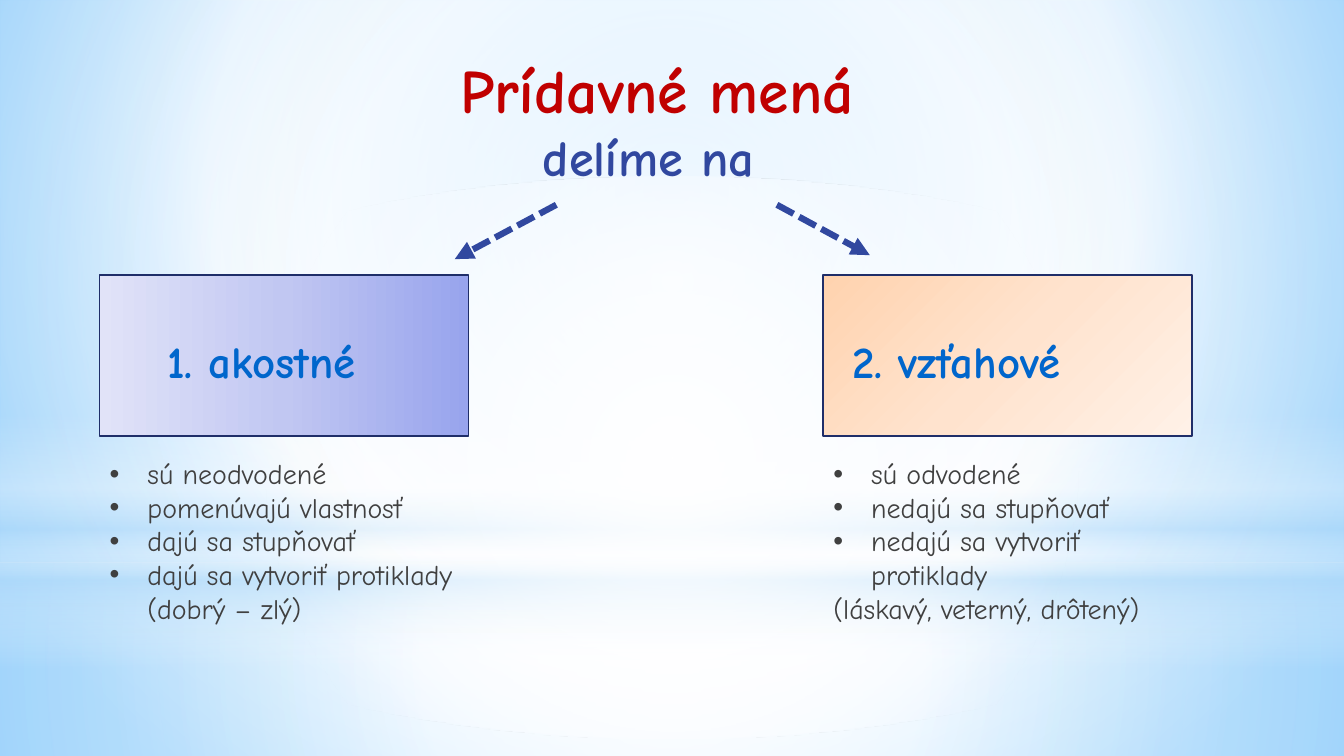
from lxml import etree
from pptx import Presentation
from pptx.dml.color import RGBColor
from pptx.enum.dml import MSO_LINE
from pptx.enum.shapes import MSO_CONNECTOR, MSO_SHAPE
from pptx.enum.text import MSO_ANCHOR, MSO_AUTO_SIZE, PP_ALIGN
from pptx.oxml.ns import qn
from pptx.util import Cm, Pt

RECT, OVAL = MSO_SHAPE.RECTANGLE, MSO_SHAPE.OVAL
STRAIGHT, DASH = MSO_CONNECTOR.STRAIGHT, MSO_LINE.SQUARE_DOT
TOP, NO_FIT = MSO_ANCHOR.TOP, MSO_AUTO_SIZE.NONE
CENTER, LEFT = PP_ALIGN.CENTER, PP_ALIGN.LEFT

WHITE = RGBColor(0xFF, 0xFF, 0xFF)
SKY = RGBColor(0x9E, 0xD5, 0xFF)
DEEP_SKY = RGBColor(0x5B, 0xB9, 0xFF)
MIST = RGBColor(0xB4, 0xDC, 0xFA)
RED = RGBColor(0xC0, 0x00, 0x00)
INDIGO = RGBColor(0x31, 0x48, 0x9F)
NAVY = RGBColor(0x1F, 0x2E, 0x69)
BLUE = RGBColor(0x00, 0x66, 0xCC)
GRAY = RGBColor(0x40, 0x40, 0x40)
LILACS = (RGBColor(0x98, 0xA4, 0xED), RGBColor(0xC1, 0xC7, 0xF2), RGBColor(0xE1, 0xE3, 0xF8))
PEACHES = (RGBColor(0xFF, 0xD3, 0xAF), RGBColor(0xFF, 0xE3, 0xCE), RGBColor(0xFF, 0xF1, 0xE7))

WIDTH, HEIGHT = 33.87, 19.05
MIDDLE = (50, 50, 50, 50)


def gradient(stops, angle=None, focus=MIDDLE):
    """Stops are (position %, colour, opacity %); without an angle it is circular."""
    grad = etree.Element(qn("a:gradFill"), rotWithShape="1")
    gs_list = etree.SubElement(grad, qn("a:gsLst"))
    for pos, color, opacity in stops:
        gs = etree.SubElement(gs_list, qn("a:gs"), pos=str(pos * 1000))
        clr = etree.SubElement(gs, qn("a:srgbClr"), val=str(color))
        if opacity < 100:
            etree.SubElement(clr, qn("a:alpha"), val=str(opacity * 1000))
    if angle is None:
        circle = etree.SubElement(grad, qn("a:path"), path="circle")
        sides = {side: str(v * 1000) for side, v in zip("ltrb", focus)}
        etree.SubElement(circle, qn("a:fillToRect"), sides)
    else:
        etree.SubElement(grad, qn("a:lin"), ang=str(angle * 60000), scaled="0")
    return grad


class SlideBuilder:
    font = "Comic Neue"

    def __init__(self, prs):
        self.slide = prs.slides.add_slide(prs.slide_layouts[3])
        self.shapes = self.slide.shapes

    def style(self, p, size, color, bold=False, align=LEFT):
        p.alignment = align
        p.space_before = Pt(0)
        for r in p.runs:
            r.font.name, r.font.size = self.font, Pt(size)
            r.font.bold, r.font.color.rgb = bold, color

    def background(self, stops, focus):
        self.slide.background.fill.solid()
        bg = self.slide.element.find(".//" + qn("p:bgPr"))
        bg.replace(bg.find(qn("a:solidFill")), gradient(stops, focus=focus))

    def shape(self, kind, box, stops, angle=None, line=None):
        sp = self.shapes.add_shape(kind, *map(Cm, box))
        sp.shadow.inherit = False
        sp.fill.solid()
        pr = sp.element.spPr
        pr.replace(pr.find(qn("a:solidFill")), gradient(stops, angle))
        if line is None:
            sp.line.fill.background()
        else:
            sp.line.color.rgb, sp.line.width = line, Pt(1.25)

    def placeholder(self, index, box, lines):
        sp = self.slide.placeholders[index]
        sp.left, sp.top, sp.width, sp.height = map(Cm, box)
        self.shapes.element.append(sp.element)  # in front of the backdrop
        tf = sp.text_frame
        tf.text = "\n".join(lines)
        tf.auto_size, tf.vertical_anchor, tf.word_wrap = NO_FIT, TOP, True
        return tf.paragraphs

    def title(self, box, heading, subheading):
        p, sub = self.placeholder(0, box, (heading, subheading))
        self.style(p, 44, RED, True, CENTER)
        self.style(sub, 36, INDIGO, True, CENTER)

    def bullets(self, index, box, items, closing=()):
        for i, p in enumerate(self.placeholder(index, box, (*items, *closing))):
            self.style(p, 20, GRAY)
            bulleted = i < len(items)
            indent = Cm(0.95) if bulleted else 0
            pr = p._p.get_or_add_pPr()
            pr.set("marL", str(indent))
            pr.set("indent", str(-indent))
            if not bulleted:
                etree.SubElement(pr, qn("a:buNone"))

    def label(self, box, text):
        tf = self.shapes.add_textbox(*map(Cm, box)).text_frame
        tf.text, tf.word_wrap = text, False
        self.style(tf.paragraphs[0], 32, BLUE, True)

    def arrow(self, *ends):
        cx = self.shapes.add_connector(STRAIGHT, *map(Cm, ends))
        cx.line.color.rgb, cx.line.width = INDIGO, Pt(4.5)
        cx.line.dash_style = DASH
        etree.SubElement(cx.line._get_or_add_ln(), qn("a:tailEnd"), type="triangle")
        etree.SubElement(cx._element.spPr, qn("a:effectLst"))


def main():
    prs = Presentation()
    prs.slide_width, prs.slide_height = Cm(WIDTH), Cm(HEIGHT)
    s = SlideBuilder(prs)

    # Backdrop of soft light
    s.background([(0, SKY, 100), (60, WHITE, 100), (100, DEEP_SKY, 100)], (20, 10, 20, 60))
    horizon = 14.17
    s.shape(RECT, (0, horizon, WIDTH, HEIGHT - horizon),
            [(0, WHITE, 91), (37, WHITE, 76), (100, MIST, 79)])
    s.shape(RECT, (0, 0, WIDTH, horizon),
            [(0, WHITE, 89), (48, WHITE, 62), (100, MIST, 79)])
    s.shape(RECT, (0, 10.46, WIDTH, 6.35),
            [(0, WHITE, 0), (29, WHITE, 30), (45, MIST, 40),
             (55, WHITE, 26), (65, MIST, 60), (100, WHITE, 0)], 90)
    s.shape(OVAL, (0, 4.45, WIDTH, horizon), [(0, WHITE, 100), (56, WHITE, 0)])

    # Heading and arrows to the two kinds
    s.title((10.13, 1.19, 12.88, 3.68), "Prídavné mená", "delíme na ")
    s.arrow(14.02, 5.16, 11.46, 6.53)
    s.arrow(19.58, 5.16, 21.92, 6.43)

    # Two kinds: box, label and features
    kinds = [
        (2.51, LILACS, 180, (3.96, 6.38), "1. akostné", 9.3,
         ("sú neodvodené", "pomenúvajú vlastnosť", "dajú sa stupňovať",
          "dajú sa vytvoriť protiklady (dobrý – zlý)"), ()),
        (20.75, PEACHES, 45, (21.23, 7.19), "2. vzťahové", 9.73,
         ("sú odvodené", "nedajú sa stupňovať", "nedajú sa vytvoriť protiklady"),
         ("(láskavý, veterný, drôtený)",)),
    ]
    for i, (x, tints, angle, (label_x, label_w), name, w, items, closing) in enumerate(kinds, 1):
        stops = [(pos, tint, 100) for pos, tint in zip((0, 50, 100), tints)]
        s.shape(RECT, (x, 6.93, 9.3, 4.06), stops, angle, NAVY)
        s.label((label_x, 8.28, label_w, 1.63), name)
        s.bullets(i, (x, 11.38, w, 4.52), items, closing)

    prs.save("out.pptx")


if __name__ == "__main__":
    main()
